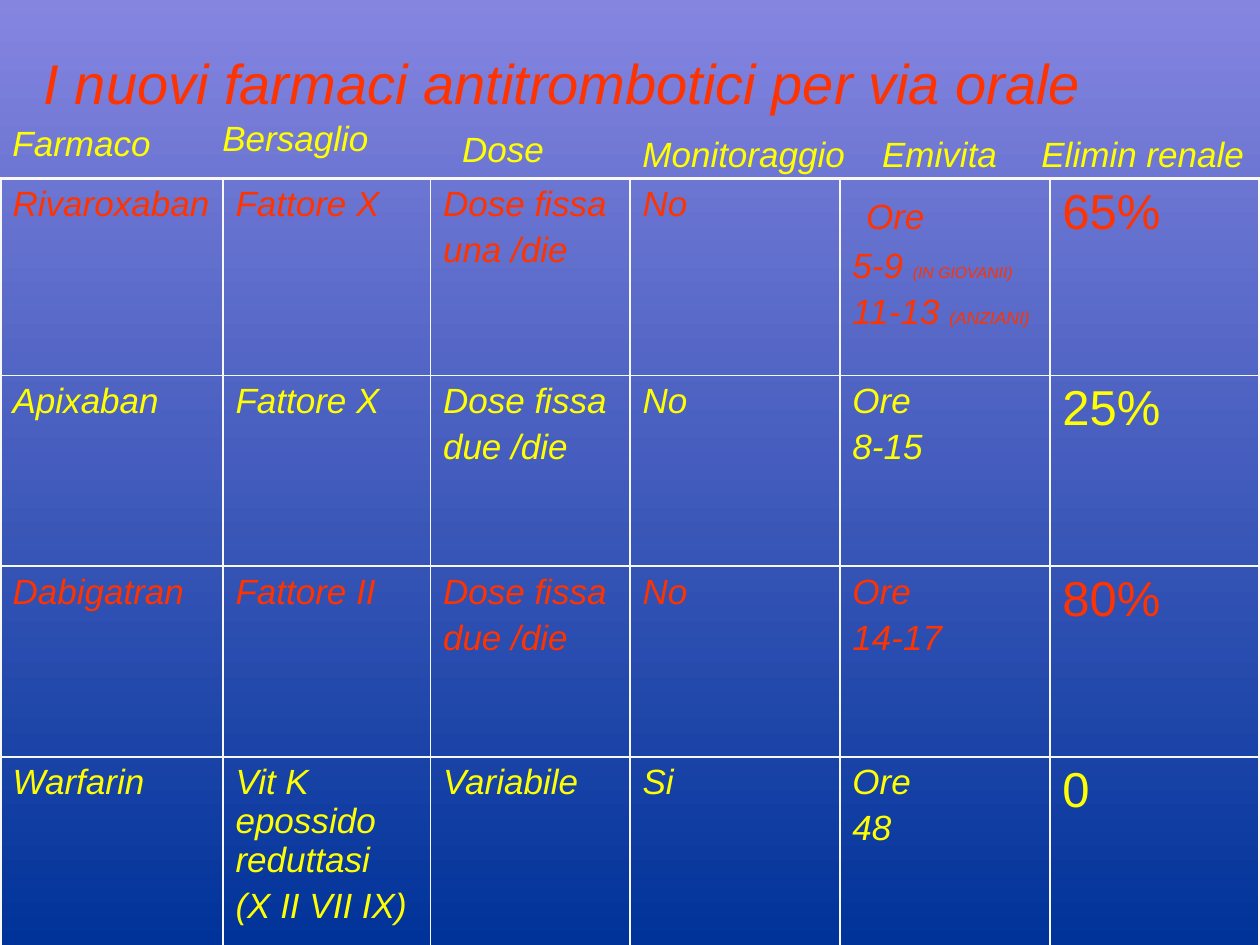
from dataclasses import dataclass

from lxml.etree import SubElement
from pptx import Presentation
from pptx.dml.color import RGBColor as Color
from pptx.enum.text import MSO_AUTO_SIZE as AutoSize
from pptx.oxml.ns import qn
from pptx.util import Pt


@dataclass(frozen=True)
class Theme:
    font: str = "Arial"
    red: str = "FF3300"
    yellow: str = "FFFF00"
    grid: str = "F8F8F8"
    sky: str = "8585E0"
    navy: str = "003399"
    title: int = 32
    body: int = 20
    figure: int = 28
    note: int = 10
    small_note: int = 9
    inner_line: float = 1
    outer_line: float = 2.25


THEME = Theme()
COLUMNS = [127.4, 118.6, 114, 120, 120, 120]
ROWS = [112.5, 109, 109, 111]
TABLE_TOP = 102

HEADINGS = [
    ("Farmaco", 0, 66, 121),
    ("Bersaglio", 120, 63, 114),
    ("Dose", 257, 69.5, 91),
    ("Monitoraggio", 360, 72, 138),
    ("Emivita", 497, 72, 91),
    ("Elimin renale", 588, 72, 132),
]

# A cell is a list of paragraphs; a paragraph is a string or a list of
# (text, format changes) spans.
FIGURE = {"size": THEME.figure, "italic": False}
RIVAROXABAN_HOURS = [
    [(" ", FIGURE), ("Ore", {})],
    [("5-9 ", {}), ("(IN GIOVANII)", {"size": THEME.small_note})],
    [("11-13 ", {}), ("(ANZIANI)", {"size": THEME.note})],
]
DRUGS = [
    [["Rivaroxaban"], ["Fattore X"], ["Dose fissa", "una /die"], ["No"],
     RIVAROXABAN_HOURS, [[("65%", FIGURE)]]],
    [["Apixaban"], ["Fattore X"], ["Dose fissa", "due /die"], ["No"],
     ["Ore", "8-15"], [[("25%", FIGURE)]]],
    [["Dabigatran"], ["Fattore II"], ["Dose fissa", "due /die"], ["No"],
     ["Ore", "14-17"], [[("80%", FIGURE)]]],
    [["Warfarin"], ["Vit K epossido reduttasi", "(X II VII IX)"],
     ["Variabile"], ["Si"], ["Ore", "48"], [[("0", FIGURE)]]],
]


class SlideBuilder:
    def __init__(self, page, theme):
        self.page = page
        self.theme = theme

    def background(self):
        fill = self.page.background.fill
        fill.gradient()
        fill.gradient_angle = 270
        for stop, color in zip(fill.gradient_stops, (self.theme.sky, self.theme.navy)):
            stop.color.rgb = Color.from_string(color)

    def add_text(self, frame, paragraphs, color, size):
        for index, content in enumerate(paragraphs):
            para = frame.add_paragraph() if index else frame.paragraphs[0]
            para.space_before = Pt(0.2 * size if index else 0)
            spans = [(content, {})] if isinstance(content, str) else content
            for text, changes in spans:
                span = para.add_run()
                span.text = text
                look = {"name": self.theme.font, "size": size, "italic": True, **changes}
                look["size"] = Pt(look["size"])
                for name, value in look.items():
                    setattr(span.font, name, value)
                span.font.color.rgb = Color.from_string(color)

    def label(self, text, left, top, width, height, color, size):
        box = self.page.shapes.add_textbox(Pt(left), Pt(top), Pt(width), Pt(height))
        frame = box.text_frame
        frame.word_wrap = True
        frame.auto_size = AutoSize.SHAPE_TO_FIT_TEXT
        self.add_text(frame, [text], color, size)

    def borders(self, cell, outer_sides):
        properties = cell._tc.get_or_add_tcPr()
        for side in "LRTB":
            width = self.theme.outer_line if side in outer_sides else self.theme.inner_line
            line = SubElement(properties, qn(f"a:ln{side}"), w=str(Pt(width)))
            fill = SubElement(line, qn("a:solidFill"))
            SubElement(fill, qn("a:srgbClr"), val=self.theme.grid)

    def table(self, top, widths, heights, rows, colors):
        shape = self.page.shapes.add_table(
            len(heights), len(widths), Pt(0), Pt(top), Pt(sum(widths)), Pt(sum(heights)))
        table = shape.table
        table.first_row = table.horz_banding = False
        for column, width in zip(table.columns, widths):
            column.width = Pt(width)
        for row, height in zip(table.rows, heights):
            row.height = Pt(height)
        last_row, last_column = len(heights) - 1, len(widths) - 1
        for r, contents in enumerate(rows):
            for c, paragraphs in enumerate(contents):
                cell = table.cell(r, c)
                edges = {"L": c == 0, "R": c == last_column, "T": r == 0, "B": r == last_row}
                self.borders(cell, [side for side, outer in edges.items() if outer])
                cell.fill.background()
                self.add_text(cell.text_frame, paragraphs, colors[r % len(colors)],
                              self.theme.body)


def main():
    deck = Presentation()
    deck.slide_width, deck.slide_height = Pt(720), Pt(540)
    builder = SlideBuilder(deck.slides.add_slide(deck.slide_layouts[6]), THEME)
    builder.background()
    builder.label("I nuovi farmaci antitrombotici per via orale",
                  18, 24, 660, 45, THEME.red, THEME.title)
    builder.table(TABLE_TOP, COLUMNS, ROWS, DRUGS, (THEME.red, THEME.yellow))
    for text, left, top, width in HEADINGS:
        builder.label(text, left, top, width, 31, THEME.yellow, THEME.body)
    deck.save("out.pptx")


if __name__ == "__main__":
    main()
